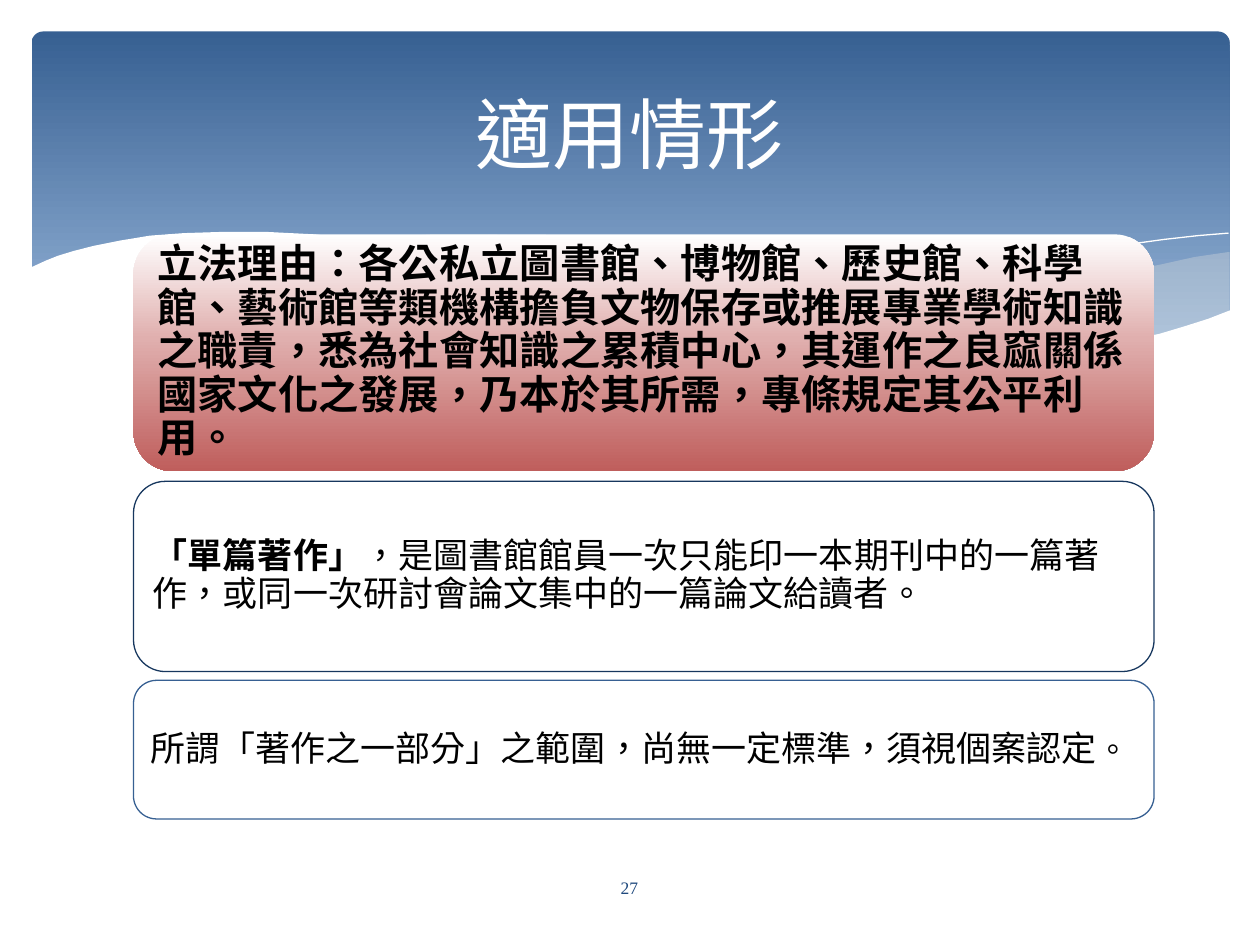
from lxml.etree import SubElement
from pptx import Presentation
from pptx.dml.color import RGBColor
from pptx.enum.lang import MSO_LANGUAGE_ID as Language
from pptx.enum.shapes import MSO_SHAPE as Preset
from pptx.enum.text import MSO_ANCHOR as Anchor, PP_ALIGN as Align
from pptx.oxml.ns import qn
from pptx.util import Inches, Pt


def color(hex_code):
    return RGBColor.from_string(hex_code)


def fill_gradient(shape, stops):
    """Fill from top to bottom with (percent, hex colour) stops."""
    shape.fill.gradient()
    shape.fill.gradient_angle = 270
    stop_list = shape._element.spPr.find(".//" + qn("a:gsLst"))
    for old_stop in list(stop_list):
        stop_list.remove(old_stop)
    for percent, hex_code in stops:
        stop = SubElement(stop_list, qn("a:gs"), pos=str(percent * 1000))
        SubElement(stop, qn("a:srgbClr"), val=hex_code)


deck = Presentation()
deck.slide_width, deck.slide_height = Inches(10), Inches(7.5)
slide = deck.slides.add_slide(deck.slide_layouts[5])
shapes = slide.shapes

# Blue banner
banner = shapes.add_shape(Preset.ROUNDED_RECTANGLE, Inches(0.25), Inches(0.25),
                          Inches(9.51), Inches(2.7))
banner.adjustments[0] = 0.034
banner.shadow.inherit = False
banner.line.fill.background()
fill_gradient(banner, [(0, "376092"), (90, "95B3D7")])

# Waves over its lower edge: outline, fill colour, opacity in percent
right_wave = [
    (9.75, 2), (9.48, 2.04), (9.21, 2.1), (8.91, 2.16), (8.61, 2.23), (8.05, 2.37),
    (7.53, 2.48), (7.06, 2.57), (6.61, 2.65), (6.91, 2.69), (7.18, 2.73), (7.45, 2.75),
    (7.69, 2.77), (8.03, 2.78), (8.35, 2.77), (8.63, 2.75), (8.89, 2.72), (9.13, 2.67),
    (9.35, 2.62), (9.49, 2.57), (9.76, 2.47), (9.76, 2)]
middle_wave = [
    (8.93, 2.73), (8.66, 2.69), (8.07, 2.6), (7.41, 2.48), (6.68, 2.31), (6.13, 2.18),
    (5.84, 2.11), (5.55, 2.05), (5.27, 2), (5.01, 1.96), (4.64, 1.91), (4.2, 1.87),
    (3.8, 1.86), (3.44, 1.86), (3.13, 1.88), (2.86, 1.91), (3.23, 1.96), (3.62, 2.03),
    (4.04, 2.11), (4.49, 2.22), (5.3, 2.4), (5.84, 2.52), (6.18, 2.58), (6.5, 2.64),
    (6.8, 2.68), (7.09, 2.72), (7.36, 2.75), (7.61, 2.77), (7.96, 2.79), (8.28, 2.78),
    (8.57, 2.77), (8.76, 2.75)]
falling_line = [
    (3.09, 1.95), (3.28, 1.92), (3.53, 1.89), (3.87, 1.87), (4.33, 1.87), (4.69, 1.89),
    (5.1, 1.92), (5.56, 1.97), (6.08, 2.04), (6.65, 2.13), (7.27, 2.26), (7.95, 2.42),
    (8.68, 2.61), (9.07, 2.72)]
rising_line = [
    (6.13, 2.57), (6.52, 2.46), (6.95, 2.35), (7.48, 2.23), (8.06, 2.1), (8.66, 1.99),
    (8.95, 1.94), (9.24, 1.9), (9.51, 1.87), (9.75, 1.85)]
white_wave = [
    (9.77, 2.46), (9.59, 2.53), (9.4, 2.59), (9.2, 2.65), (8.99, 2.69), (8.75, 2.73),
    (8.5, 2.75), (8.23, 2.77), (7.93, 2.76), (7.61, 2.75), (7.26, 2.72), (6.88, 2.68),
    (6.47, 2.62), (6.03, 2.54), (5.55, 2.45), (5.03, 2.33), (4.47, 2.2), (3.91, 2.07),
    (3.39, 1.97), (2.92, 1.91), (2.5, 1.86), (2.11, 1.84), (1.77, 1.84), (1.46, 1.85),
    (1.19, 1.87), (0.95, 1.91), (0.75, 1.95), (0.59, 1.99), (0.46, 2.03), (0.36, 2.07),
    (0.23, 2.13), (0.23, 3.29), (9.77, 3.29)]
waves = [
    (right_wave, "EEECE1", 29),
    (middle_wave, "EEECE1", 40),
    (falling_line, None, None),
    (rising_line, None, None),
    (white_wave, "FFFFFF", 100),
]
for outline, fill_color, opacity in waves:
    start, *rest = [(Inches(x), Inches(y)) for x, y in outline]
    builder = shapes.build_freeform(*start)
    builder.add_line_segments(rest, close=fill_color is not None)
    wave = builder.convert_to_shape()
    wave.shadow.inherit = False
    if fill_color:
        wave.line.fill.background()
        wave.fill.solid()
        wave.fill.fore_color.rgb = color(fill_color)
        fill_xml = wave._element.spPr.find(qn("a:solidFill"))[0]
        SubElement(fill_xml, qn("a:alpha"), val=str(opacity * 1000))
    else:
        wave.fill.background()
        wave.line.color.rgb = color("FFFFFF")
        wave.line.width = Pt(0)

# Cards: top, height, text inset, line colour, runs of (text, size, bold)
cards = [
    (1.86, 1.88, 0.1, None, [
        ("立法理由：各公私立圖書館、博物館、歷史館、科學館、藝術館等類機構擔負文物保存"
         "或推展專業學術知識之職責，悉為社會知識之累積中心，其運作之良窳關係國家文化之"
         "發展，乃本於其所需，專條規定其公平利用。", 23, True)]),
    (3.82, 1.51, 0.08, "17375E", [
        ("「單篇著作」", 20, True),
        ("，是圖書館館員一次只能印一本期刊中的一篇著作，或同一次研討會論文集中的一篇"
         "論文給讀者。", 20, False)]),
    (5.4, 1.1, 0.08, "376092", [
        ("所謂「著作之一部分」之範圍，尚無一定標準，須視個案認定", 20, False),
        ("。", 18, False)]),
]
for top, height, inset, line_color, runs in cards:
    card = shapes.add_shape(Preset.ROUNDED_RECTANGLE, Inches(1.06), Inches(top),
                            Inches(8.1), Inches(height))
    card.shadow.inherit = False
    if line_color:
        card.fill.background()
        card.line.color.rgb = color(line_color)
        card.line.width = Pt(0.75)
    else:
        card.line.fill.background()
        fill_gradient(card, [(0, "FFFFFF"), (44, "E0AFAE"), (100, "BF5E5C")])
    frame = card.text_frame
    frame.word_wrap = True
    frame.vertical_anchor = Anchor.MIDDLE
    for side in ("left", "top", "right", "bottom"):
        setattr(frame, f"margin_{side}", Inches(inset))
    paragraph = frame.paragraphs[0]
    paragraph.alignment = Align.LEFT
    paragraph.line_spacing = 0.9
    # Keep punctuation inside the right margin
    paragraph._p.get_or_add_pPr().set("hangingPunct", "0")
    for text, size, bold in runs:
        run = paragraph.add_run()
        run.text = text
        run.font.color.rgb = color("000000")
        run_format = {"name": "Cabin", "size": Pt(size), "bold": bold,
                      "language_id": Language.TRADITIONAL_CHINESE}
        for key, value in run_format.items():
            setattr(run.font, key, value)

# Title and page number, in front of the banner
title = shapes.title
shapes._spTree.append(title._element)
page_number = shapes.add_textbox(0, 0, 0, 0)
labels = [
    (title, (0.5, 0.37, 9, 1.37), "適用情形", "FFFFFF",
     {"name": "Cabin", "size": Pt(44), "language_id": Language.TRADITIONAL_CHINESE}),
    (page_number, (4.36, 6.84, 1.27, 0.4), "27", "1F497D",
     {"name": "Times New Roman", "size": Pt(10)}),
]
for label, place, text, text_color, font_format in labels:
    label.left, label.top, label.width, label.height = map(Inches, place)
    frame = label.text_frame
    frame.word_wrap = True
    frame.vertical_anchor = Anchor.MIDDLE
    paragraph = frame.paragraphs[0]
    paragraph.alignment = Align.CENTER
    run = paragraph.add_run()
    run.text = text
    run.font.color.rgb = color(text_color)
    for key, value in font_format.items():
        setattr(run.font, key, value)

deck.save("out.pptx")
